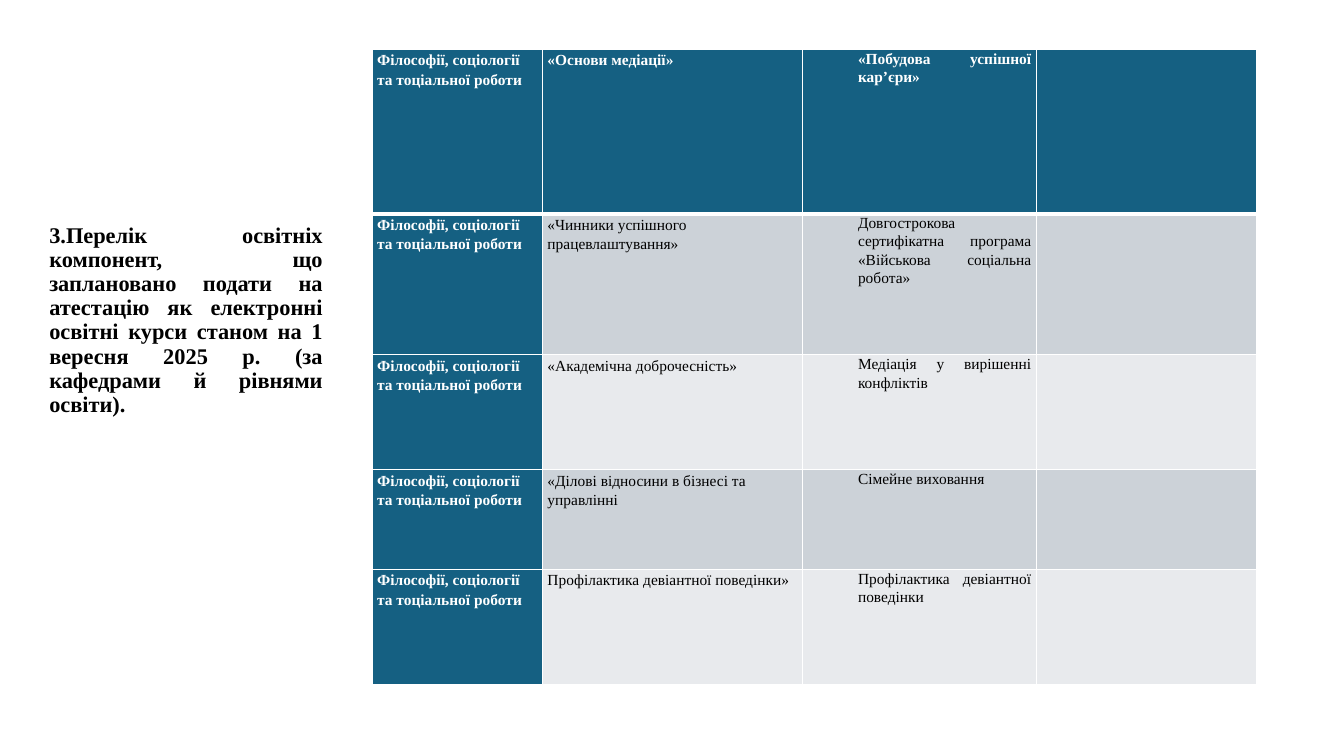
import pptx
import pptx.dml.color
import pptx.enum.text
import pptx.oxml
import pptx.oxml.ns
import pptx.util

Inches = pptx.util.Inches
ALIGN = pptx.enum.text.PP_ALIGN
FONT = "Times New Roman"
COLORS = {"black": "000000", "white": "FFFFFF", "header": "156082",
          "dark_band": "CCD2D8", "light_band": "E8EAED"}
HEADING = ("3.Перелік освітніх компонент, що заплановано подати на атестацію як "
           "електронні освітні курси станом на 1 вересня 2025 р. (за кафедрами й "
           "рівнями освіти).")
DEPARTMENT = "Філософії, соціології та тоціальної роботи"
COURSES = [
    ("«Основи медіації»", "«Побудова успішної кар’єри»"),
    ("«Чинники успішного працевлаштування»",
     "Довгострокова сертифікатна програма «Військова соціальна робота»"),
    ("«Академічна доброчесність»", "Медіація у вирішенні конфліктів"),
    ("«Ділові відносини в бізнесі та управлінні", "Сімейне виховання"),
    ("Профілактика девіантної поведінки»", "Профілактика девіантної поведінки"),
]
COLUMN_WIDTHS = [1.69, 2.58, 2.32, 2.18]
ROW_HEIGHTS = [1.63, 1.4, 1.14, 0.99, 1.14]


def color(name):
    """Return the named colour."""
    return pptx.dml.color.RGBColor.from_string(COLORS[name])


def write_text(frame, text, size=11, ink="black", bold=False, align=ALIGN.LEFT,
               spacing=1.0, after=8, indent=0):
    """Write one formatted paragraph into a text frame."""
    frame.word_wrap = True
    para = frame.paragraphs[0]
    para.alignment = align
    para.line_spacing = spacing
    para.space_after = pptx.util.Pt(after)
    if indent:
        properties = para._p.get_or_add_pPr()
        properties.set("marL", str(Inches(indent)))
        properties.set("indent", "0")
    span = para.add_run()
    span.text = text
    span.font.name = FONT
    span.font.size = pptx.util.Pt(size)
    span.font.bold = bold
    span.font.color.rgb = color(ink)


def style_cell(cell, fill, top=1, bottom=1):
    """Give a cell white borders of the given widths and a solid fill."""
    properties = cell._tc.get_or_add_tcPr()
    for side, width in (("L", 1), ("R", 1), ("T", top), ("B", bottom)):
        properties.append(pptx.oxml.parse_xml(
            f'<a:ln{side} {pptx.oxml.ns.nsdecls("a")} w="{pptx.util.Pt(width)}">'
            f'<a:solidFill><a:srgbClr val="{COLORS["white"]}"/></a:solidFill>'
            f'</a:ln{side}>'))
    cell.fill.solid()
    cell.fill.fore_color.rgb = color(fill)


def add_heading(page, left, top, width, height):
    """Place the bottom-anchored heading in the given box."""
    box = page.shapes.add_textbox(Inches(left), Inches(top), Inches(width), Inches(height))
    box.text_frame.vertical_anchor = pptx.enum.text.MSO_ANCHOR.BOTTOM
    write_text(box.text_frame, HEADING, size=16, bold=True,
               align=ALIGN.JUSTIFY, spacing=0.9)


def add_course_table(page, left, top, width, height):
    """Place the table of courses in the given box."""
    table = page.shapes.add_table(
        len(ROW_HEIGHTS), len(COLUMN_WIDTHS),
        Inches(left), Inches(top), Inches(width), Inches(height)).table
    for column, share in zip(table.columns, COLUMN_WIDTHS):
        column.width = Inches(width * share / sum(COLUMN_WIDTHS))
    for row, share in zip(table.rows, ROW_HEIGHTS):
        row.height = Inches(height * share / sum(ROW_HEIGHTS))
    for row, courses in enumerate(COURSES):
        band = "dark_band" if row % 2 else "light_band"
        for column, text in enumerate((DEPARTMENT, *courses, "")):
            cell = table.cell(row, column)
            strong = row == 0 or column == 0
            style_cell(cell, "header" if strong else band,
                       top=3 if row == 1 else 1, bottom=3 if row == 0 else 1)
            if not text:
                continue
            cell.margin_left = cell.margin_right = Inches(0.05)
            cell.margin_top = cell.margin_bottom = 0
            layout = {"spacing": 1.15}
            if column == 2:
                layout = {"spacing": 1.07, "align": ALIGN.JUSTIFY, "indent": 0.5,
                          "after": 8 if row else 0}
            write_text(cell.text_frame, text, bold=strong,
                       ink="white" if strong else "black", **layout)


def main():
    """Build and save the deck."""
    deck = pptx.Presentation()
    deck.slide_width, deck.slide_height = Inches(13.33), Inches(7.5)
    page = deck.slides.add_slide(deck.slide_layouts[6])
    add_heading(page, 0.39, 1.76, 2.91, 2.43)
    add_course_table(page, 3.69, 0.49, 8.77, 6.3)
    deck.save("out.pptx")


if __name__ == "__main__":
    main()
